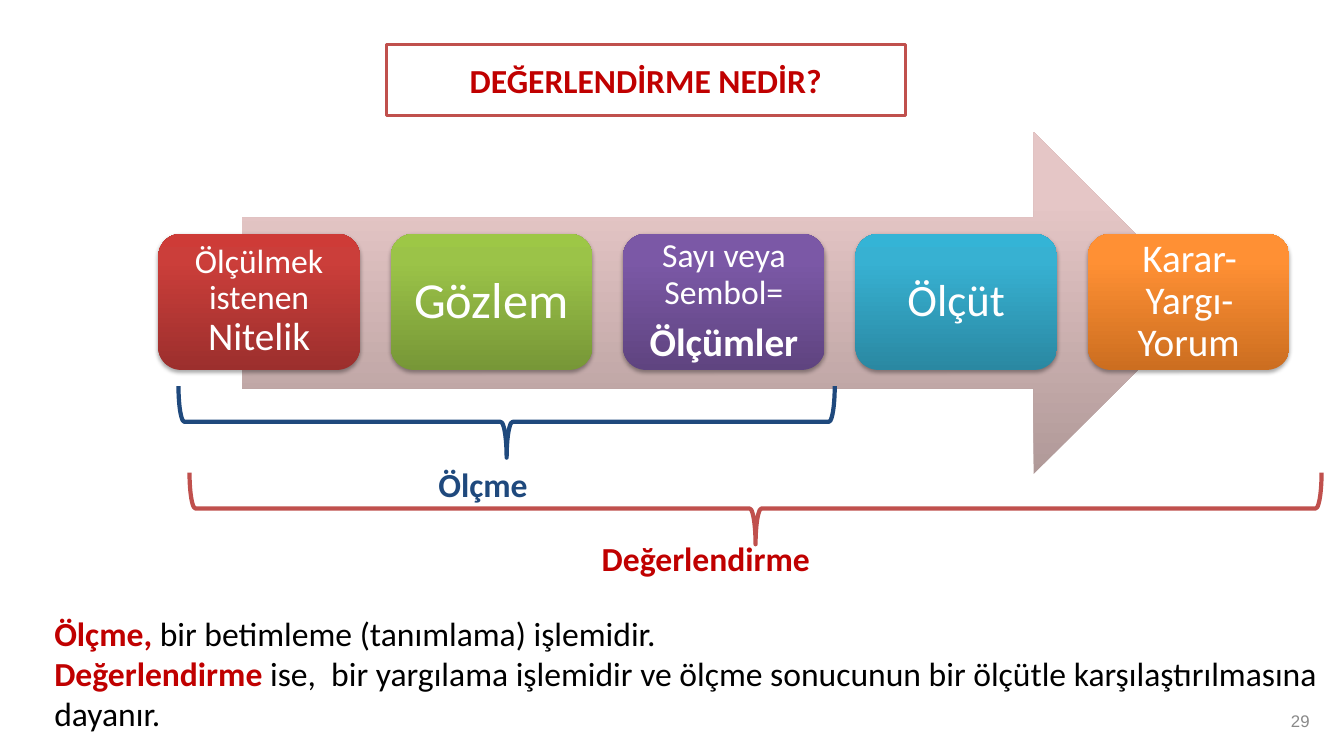
from pptx import Presentation
from pptx import util as u
from pptx.dml.color import RGBColor
from pptx.enum import shapes, text
from pptx.oxml import parse_xml
from pptx.oxml.ns import nsdecls, qn

WIDTH, HEIGHT = u.Inches(13.33), u.Inches(7.5)
COLUMN, ROW = WIDTH / 100, HEIGHT / 100

WHITE = RGBColor(0xFF, 0xFF, 0xFF)
BLACK = RGBColor(0x00, 0x00, 0x00)
GREY = RGBColor(0x89, 0x89, 0x89)
RED = RGBColor(0xC0, 0x00, 0x00)
BRICK = RGBColor(0xC0, 0x50, 0x4D)
NAVY = RGBColor(0x1F, 0x49, 0x7D)

# Gradients run from bottom to top, with stops at these percentages.
STOPS = (0, 80, 100)
ARROW_PINK = (RGBColor(0xB0, 0x99, 0x98), RGBColor(0xE5, 0xC6, 0xC6), RGBColor(0xE6, 0xC7, 0xC6))
STEP_RED = (RGBColor(0x9C, 0x2F, 0x2D), RGBColor(0xCB, 0x3E, 0x3A), RGBColor(0xCE, 0x3B, 0x37))
STEP_GREEN = (RGBColor(0x77, 0x97, 0x37), RGBColor(0x9B, 0xC3, 0x48), RGBColor(0x9D, 0xC7, 0x46))
STEP_PURPLE = (RGBColor(0x5F, 0x44, 0x80), RGBColor(0x7B, 0x58, 0xA6), RGBColor(0x7C, 0x57, 0xA8))
STEP_BLUE = (RGBColor(0x2A, 0x88, 0xA2), RGBColor(0x37, 0xB1, 0xD2), RGBColor(0x34, 0xB4, 0xD6))
STEP_ORANGE = (RGBColor(0xCC, 0x6E, 0x20), RGBColor(0xFF, 0x90, 0x34), RGBColor(0xFF, 0x91, 0x36))

# Each step: gradient, text inset in inches, paragraphs of (wording, size, bold) runs.
STEPS = [
    (STEP_RED, 0.1, [[("Ölçülmek istenen ", 24, False), ("Nitelik", 28, False)]]),
    (STEP_GREEN, 0.15, [[("Gözlem", 36, False)]]),
    (STEP_PURPLE, 0.1, [[("Sayı veya Sembol=", 24, False)], [("Ölçümler", 28, True)]]),
    (STEP_BLUE, 0.13, [[("Ölçüt", 32, False)]]),
    (STEP_ORANGE, 0.12, [[("Karar-Yargı-Yorum", 28, False)]]),
]
STEP_LEFT, STEP_PITCH = 11.78, 17.29

EXPLANATION = [
    [("Ölçme, ", RED, True), ("bir betimleme (tanımlama) işlemidir.", BLACK, False)],
    [("Değerlendirme ", RED, True),
     ("ise,  bir yargılama işlemidir ve ölçme sonucunun bir ölçütle "
      "karşılaştırılmasına dayanır.", BLACK, False)],
]


def place(left, top, width, height):
    """Turn columns and rows of the grid into slide lengths."""
    return [round(length) for length in
            (left * COLUMN, top * ROW, width * COLUMN, height * ROW)]


def set_font(font, size, color, bold=False, name="Calibri"):
    font.name, font.size, font.bold = name, u.Pt(size), bold
    font.color.rgb = color


def add_plain_shape(slide, kind, *box):
    shape = slide.shapes.add_shape(kind, *place(*box))
    shape.shadow.inherit = False
    shape.line.fill.background()
    return shape


def fill_gradient(shape, colors):
    shape.fill.gradient()
    shape.fill.gradient_angle = 90
    stops = "".join(
        f'<a:gs pos="{stop * 1000}"><a:srgbClr val="{color}"/></a:gs>'
        for stop, color in zip(STOPS, colors))
    gradient = shape._element.spPr.find(qn("a:gradFill"))
    gradient.replace(gradient.find(qn("a:gsLst")),
                     parse_xml(f'<a:gsLst {nsdecls("a")}>{stops}</a:gsLst>'))


def add_drop_shadow(shape):
    shape._element.spPr.find(qn("a:effectLst")).append(parse_xml(
        f'<a:outerShdw {nsdecls("a")} blurRad="{u.Pt(3.1)}" dist="{u.Pt(1.8)}" '
        'dir="5400000" rotWithShape="0"><a:srgbClr val="000000">'
        '<a:alpha val="35000"/></a:srgbClr></a:outerShdw>'))


def add_title(slide, wording):
    shape = add_plain_shape(slide, shapes.MSO_SHAPE.RECTANGLE, 28.73, 5.87, 38.63, 9.47)
    shape.fill.solid()
    shape.fill.fore_color.rgb = WHITE
    shape.line.color.rgb = BRICK
    shape.line.width = u.Pt(2)
    paragraph = shape.text_frame.paragraphs[0]
    paragraph.text = wording
    paragraph.alignment = text.PP_ALIGN.CENTER
    set_font(paragraph.font, 24, RED, True)


def add_step(slide, index, colors, inset, paragraphs):
    shape = add_plain_shape(slide, shapes.MSO_SHAPE.ROUNDED_RECTANGLE,
                            STEP_LEFT + index * STEP_PITCH, 30.93, 15, 18)
    fill_gradient(shape, colors)
    add_drop_shadow(shape)
    frame = shape.text_frame
    frame.margin_left = frame.margin_right = u.Inches(inset)
    frame.margin_top = frame.margin_bottom = u.Inches(inset)
    for number, runs in enumerate(paragraphs):
        paragraph = frame.add_paragraph() if number else frame.paragraphs[0]
        paragraph.alignment = text.PP_ALIGN.CENTER
        paragraph.line_spacing = 0.9
        paragraph.space_after = u.Pt(round(0.35 * runs[0][1]))
        for wording, size, bold in runs:
            run = paragraph.add_run()
            run.text = wording
            set_font(run.font, size, WHITE, bold)


def add_brace(slide, color, left, top, width, height):
    """Draw a brace that opens upwards and fills the given box."""
    left, top, width, height = place(left, top, width, height)
    brace = slide.shapes.add_shape(
        shapes.MSO_SHAPE.RIGHT_BRACE, left + (width - height) // 2,
        top + (height - width) // 2, height, width)
    brace.rotation = 90
    brace.adjustments[0] = 0.083
    brace.shadow.inherit = False
    brace.fill.background()
    brace.line.color.rgb = color
    brace.line.width = u.Pt(3)


def add_text_frame(slide, *box):
    frame = slide.shapes.add_textbox(*place(*box)).text_frame
    frame.word_wrap = True
    return frame


def add_label(slide, wording, color, *box):
    paragraph = add_text_frame(slide, *box).paragraphs[0]
    paragraph.text = wording
    set_font(paragraph.font, 24, color, True)


def add_explanation(slide):
    frame = add_text_frame(slide, 3.3, 80.4, 96.3, 17.47)
    for number, runs in enumerate(EXPLANATION):
        paragraph = frame.add_paragraph() if number else frame.paragraphs[0]
        for wording, color, bold in runs:
            run = paragraph.add_run()
            run.text = wording
            set_font(run.font, 24, color, bold)


def add_page_number(slide, number):
    frame = add_text_frame(slide, 74.85, 92.67, 23.33, 5.33)
    frame.vertical_anchor = text.MSO_ANCHOR.MIDDLE
    paragraph = frame.paragraphs[0]
    paragraph.text = number
    paragraph.alignment = text.PP_ALIGN.RIGHT
    set_font(paragraph.font, 12, GREY, name="Arial")


def main():
    presentation = Presentation()
    presentation.slide_width, presentation.slide_height = WIDTH, HEIGHT
    slide = presentation.slides.add_slide(presentation.slide_layouts[6])
    add_title(slide, "DEĞERLENDİRME NEDİR?")
    arrow = add_plain_shape(slide, shapes.MSO_SHAPE.RIGHT_ARROW, 18, 17.47, 71.63, 45.2)
    fill_gradient(arrow, ARROW_PINK)
    for index, step in enumerate(STEPS):
        add_step(slide, index, *step)
    add_explanation(slide)
    add_brace(slide, NAVY, 13.28, 51.07, 48.83, 9.47)
    add_label(slide, "Ölçme", NAVY, 31.88, 60.67, 67.73, 6.8)
    add_brace(slide, BRICK, 14.1, 62.53, 84.23, 9.47)
    add_label(slide, "Değerlendirme", RED, 44.03, 70.53, 55.13, 6.8)
    add_page_number(slide, "29")
    presentation.save("out.pptx")


if __name__ == "__main__":
    main()
